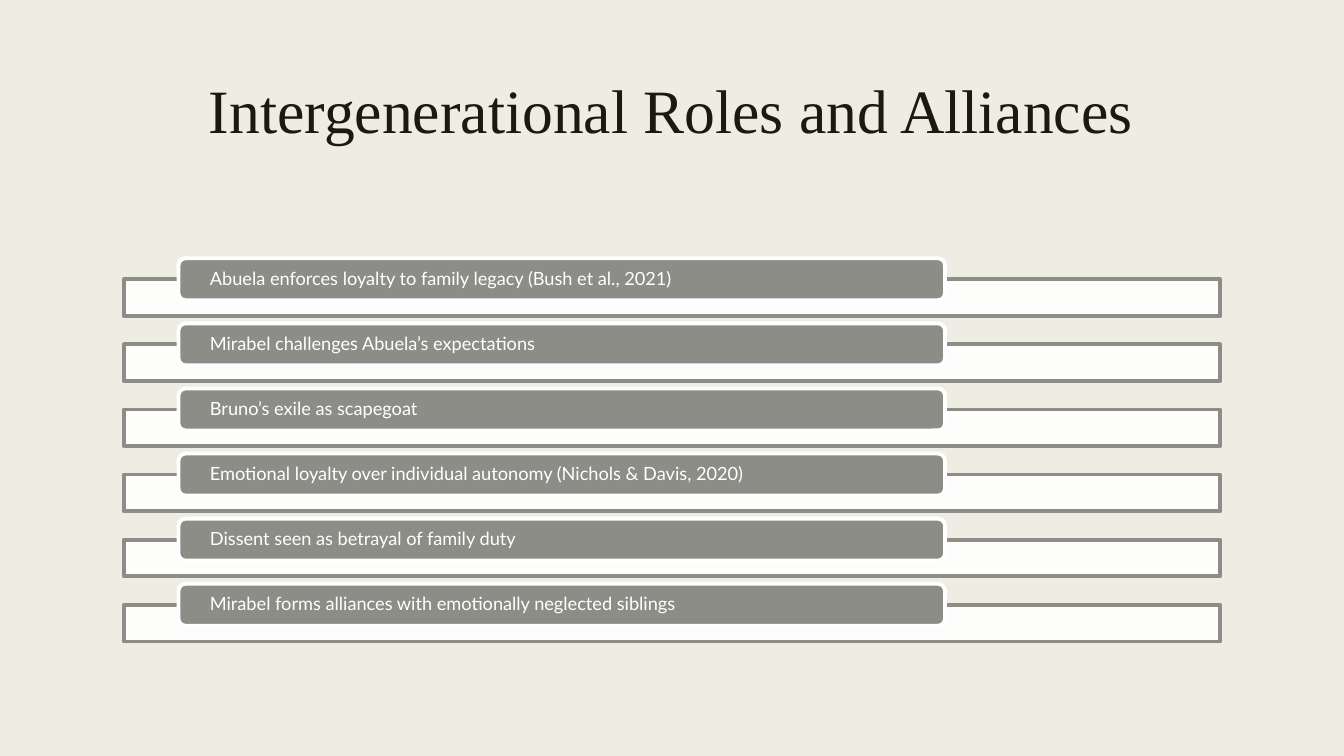
from dataclasses import dataclass

from lxml.etree import SubElement
from pptx import Presentation
from pptx.dml.color import RGBColor
from pptx.enum.shapes import MSO_SHAPE
from pptx.enum.text import MSO_ANCHOR, PP_ALIGN
from pptx.oxml.ns import qn
from pptx.util import Pt

PX = 9525  # EMU in one px, 96 px to the inch
COLORS = {"paper": "EFEDE3", "ink": "191B0E", "grey": "8C8D86", "white": "FFFFFF"}

TITLE = "Intergenerational Roles and Alliances"
ROLES = [
    "Abuela enforces loyalty to family legacy (Bush et al., 2021)",
    "Mirabel challenges Abuela’s expectations",
    "Bruno’s exile as scapegoat",
    "Emotional loyalty over individual autonomy (Nichols & Davis, 2020)",
    "Dissent seen as betrayal of family duty",
    "Mirabel forms alliances with emotionally neglected siblings",
]
ROW_PITCH = 62


@dataclass(frozen=True)
class Box:
    left: int
    top: int
    width: int
    height: int

    def emu(self, down: int = 0) -> tuple[int, ...]:
        """Position and size in EMU, moved down by some px."""
        return tuple(v * PX for v in (self.left, self.top + down, self.width, self.height))


@dataclass(frozen=True)
class Panel:
    kind: MSO_SHAPE
    box: Box
    fill: str
    line: str
    opacity: int = 100


@dataclass(frozen=True)
class TextStyle:
    font: str
    size: int
    color: str
    align: PP_ALIGN
    anchor: MSO_ANCHOR
    spacing: float
    inset_x: int
    inset_y: int


TITLE_BOX = Box(67, 72, 1145, 155)
STRIP = Panel(MSO_SHAPE.RECTANGLE, Box(118, 266, 1044, 35), "white", "grey", 90)
LABEL = Panel(MSO_SHAPE.ROUNDED_RECTANGLE, Box(170, 246, 730, 40), "grey", "white")
TITLE_STYLE = TextStyle("Times New Roman", 44, "ink", PP_ALIGN.CENTER, MSO_ANCHOR.TOP, 0.89, 10, 5)
LABEL_STYLE = TextStyle("Lato", 13, "white", PP_ALIGN.LEFT, MSO_ANCHOR.MIDDLE, 0.9, 28, 0)


def rgb(name: str) -> RGBColor:
    return RGBColor.from_string(COLORS[name])


def write(s, text: str, style: TextStyle) -> None:
    tf = s.text_frame
    p = tf.paragraphs[0]
    r = p.add_run()
    x, y = style.inset_x * PX, style.inset_y * PX
    formats = [
        (tf, {"word_wrap": True, "vertical_anchor": style.anchor, "margin_left": x,
              "margin_right": x, "margin_top": y, "margin_bottom": y}),
        (p, {"alignment": style.align, "line_spacing": style.spacing}),
        (r, {"text": text}),
        (r.font, {"name": style.font, "size": Pt(style.size)}),
        (r.font.color, {"rgb": rgb(style.color)}),
    ]
    for target, values in formats:
        for name, value in values.items():
            setattr(target, name, value)


def add_panel(shapes, panel: Panel, down: int):
    s = shapes.add_shape(panel.kind, *panel.box.emu(down))
    s.shadow.inherit = False
    s.fill.solid()
    s.fill.fore_color.rgb = rgb(panel.fill)
    s.line.color.rgb = rgb(panel.line)
    s.line.width = Pt(2.75)
    if panel.opacity < 100:
        color = s.element.spPr.find(qn("a:solidFill")).find(qn("a:srgbClr"))
        SubElement(color, qn("a:alpha")).set("val", str(panel.opacity * 1000))
    return s


def main() -> None:
    prs = Presentation()
    prs.slide_width, prs.slide_height = 1280 * PX, 720 * PX
    slide = prs.slides.add_slide(prs.slide_layouts[6])
    slide.background.fill.solid()
    slide.background.fill.fore_color.rgb = rgb("paper")

    write(slide.shapes.add_textbox(*TITLE_BOX.emu()), TITLE, TITLE_STYLE)
    for row, role in enumerate(ROLES):
        add_panel(slide.shapes, STRIP, row * ROW_PITCH)
        write(add_panel(slide.shapes, LABEL, row * ROW_PITCH), role, LABEL_STYLE)
    prs.save("out.pptx")


if __name__ == "__main__":
    main()
